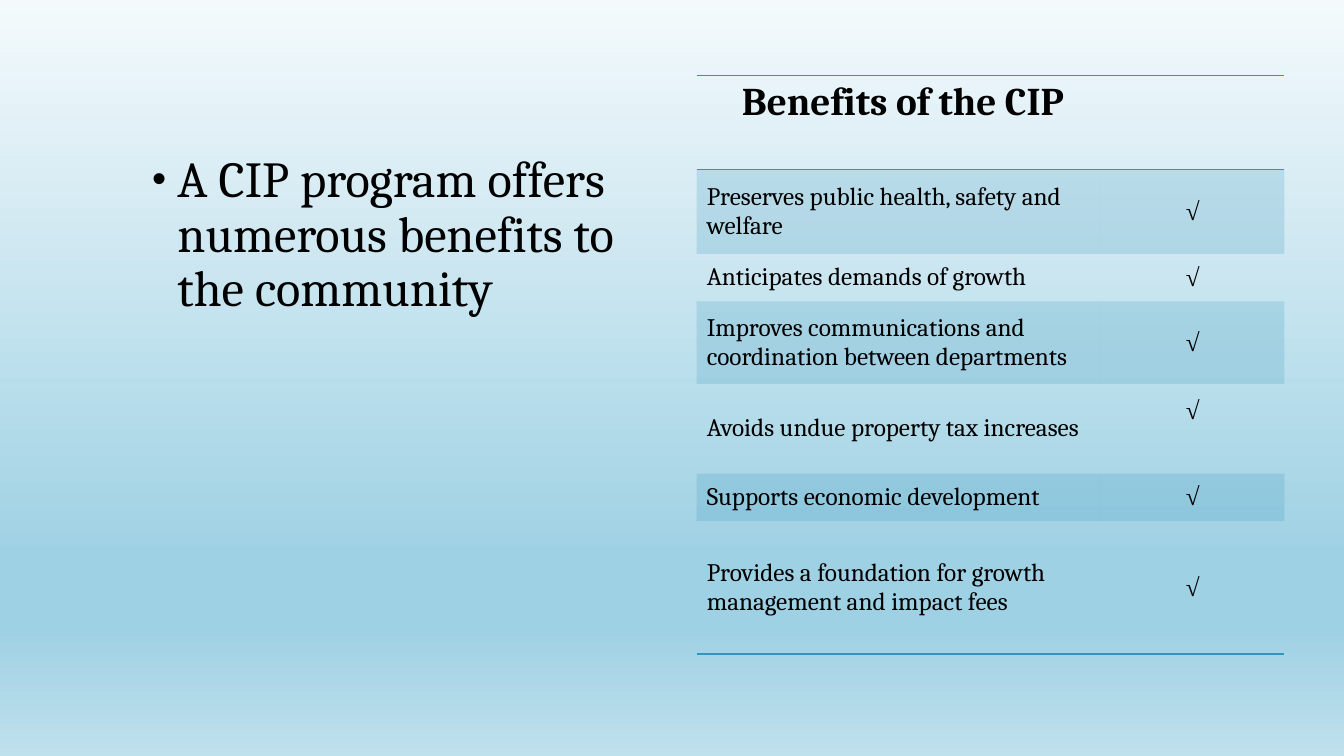
from lxml import etree
from pptx import Presentation
from pptx import util as u
from pptx.dml.color import RGBColor
from pptx.enum import text
from pptx.oxml.ns import qn

WIDTH, HEIGHT = 13.33, 7.5
TOP = HEIGHT / 10
ACCENT, INK = "3494BA", "000000"
SKY = [(0, "F4FAFC"), (74, "9FD1E4"), (83, "9FD1E4"), (100, "BFE0ED")]
COLUMNS = [4.01, 1.82]
HEADER_HEIGHT = 0.93
BENEFITS = [
    ("Preserves public health, safety and welfare", 0.84),
    ("Anticipates demands of growth", 0.47),
    ("Improves communications and coordination between departments", 0.82),
    ("Avoids undue property tax increases", 0.89),
    ("Supports economic development", 0.47),
    ("Provides a foundation for growth management and impact fees", 1.32),
]
RAISED_CHECK = 4


def colour(hex_code):
    return RGBColor.from_string(hex_code)


def add_node(parent, tag, **attributes):
    return etree.SubElement(parent, qn(tag), {k: str(v) for k, v in attributes.items()})


def paint_sky(slide):
    fill = slide.background.fill
    fill.gradient()
    fill.gradient_angle = 270
    stops = slide.element.find(".//" + qn("a:gsLst"))
    for stop in list(stops):
        stops.remove(stop)
    for share, hex_code in SKY:
        stop = add_node(stops, "a:gs", pos=share * 1000)
        add_node(stop, "a:srgbClr", val=hex_code)


def format_runs(paragraph, size, font="Cambria", bold=False):
    for run in paragraph.runs:
        run.font.name = font
        run.font.size = u.Pt(size)
        run.font.bold = bold
        run.font.color.rgb = colour(INK)


def write_message(slide, message):
    slide.shapes.title.element.getparent().remove(slide.shapes.title.element)
    body = slide.placeholders[1]
    body.left, body.top = u.Inches(1.41), u.Inches(TOP)
    body.width, body.height = u.Inches(5.5), u.Inches(4.58)
    frame = body.text_frame
    frame.text = message
    frame.vertical_anchor = text.MSO_ANCHOR.TOP
    frame.margin_top = u.Inches(0.78)
    paragraph = frame.paragraphs[0]
    paragraph.line_spacing = 0.9
    paragraph.space_before = u.Pt(0)
    format_runs(paragraph, 36)
    props = paragraph._p.get_or_add_pPr()
    props.set("marL", str(u.Inches(0.25)))
    props.set("indent", str(-u.Inches(0.25)))
    add_node(add_node(props, "a:buClr"), "a:srgbClr", val=INK)
    add_node(props, "a:buSzPct", val=80000)
    add_node(props, "a:buFont", typeface="Arial")
    add_node(props, "a:buChar", char="•")


def write_cell(cell, wording, size=18, centred=False, **font):
    cell.text = wording
    paragraph = cell.text_frame.paragraphs[0]
    if centred:
        paragraph.alignment = text.PP_ALIGN.CENTER
    format_runs(paragraph, size, **font)


def rule_cell(cell, *sides):
    for side in sides:
        line = add_node(cell._tc.get_or_add_tcPr(), "a:ln" + side, w=u.Pt(1))
        add_node(add_node(line, "a:solidFill"), "a:srgbClr", val=ACCENT)


def tint_cell(cell):
    cell.fill.solid()
    cell.fill.fore_color.rgb = colour(ACCENT)
    add_node(cell._tc.tcPr.find(".//" + qn("a:srgbClr")), "a:alpha", val=20000)


def add_benefits(slide):
    heights = [HEADER_HEIGHT] + [height for _, height in BENEFITS]
    table = slide.shapes.add_table(
        len(heights), len(COLUMNS), u.Inches(6.91), u.Inches(TOP),
        u.Inches(sum(COLUMNS)), u.Inches(sum(heights))).table
    table.first_row = table.horz_banding = False
    table._tbl.tblPr.find(qn("a:tableStyleId")).text = "{2D5ABB26-0587-4C30-8999-92F81FD0307C}"
    for column, width in zip(table.columns, COLUMNS):
        column.width = u.Inches(width)
    for row, height in zip(table.rows, heights):
        row.height = u.Inches(height)

    heading = table.cell(0, 0)
    write_cell(heading, "Benefits of the CIP", 28, centred=True, bold=True)
    heading.margin_left = u.Inches(0.18)
    for cell in table.rows[0].cells:
        rule_cell(cell, "T", "B")

    for number, (benefit, _) in enumerate(BENEFITS, 1):
        label, check = table.rows[number].cells
        write_cell(label, benefit)
        write_cell(check, "√", centred=True, font="Times New Roman")
        for cell in (label, check):
            cell.vertical_anchor = text.MSO_ANCHOR.MIDDLE
            if number == len(BENEFITS):
                rule_cell(cell, "B")
            if number % 2:
                tint_cell(cell)
            else:
                cell.fill.background()
    table.cell(RAISED_CHECK, 1).margin_bottom = u.Inches(0.41)


def main():
    deck = Presentation()
    deck.slide_width, deck.slide_height = u.Inches(WIDTH), u.Inches(HEIGHT)
    slide = deck.slides.add_slide(deck.slide_layouts[1])
    paint_sky(slide)
    write_message(slide, "A CIP program offers numerous benefits to the community")
    add_benefits(slide)
    deck.save("out.pptx")


if __name__ == "__main__":
    main()
